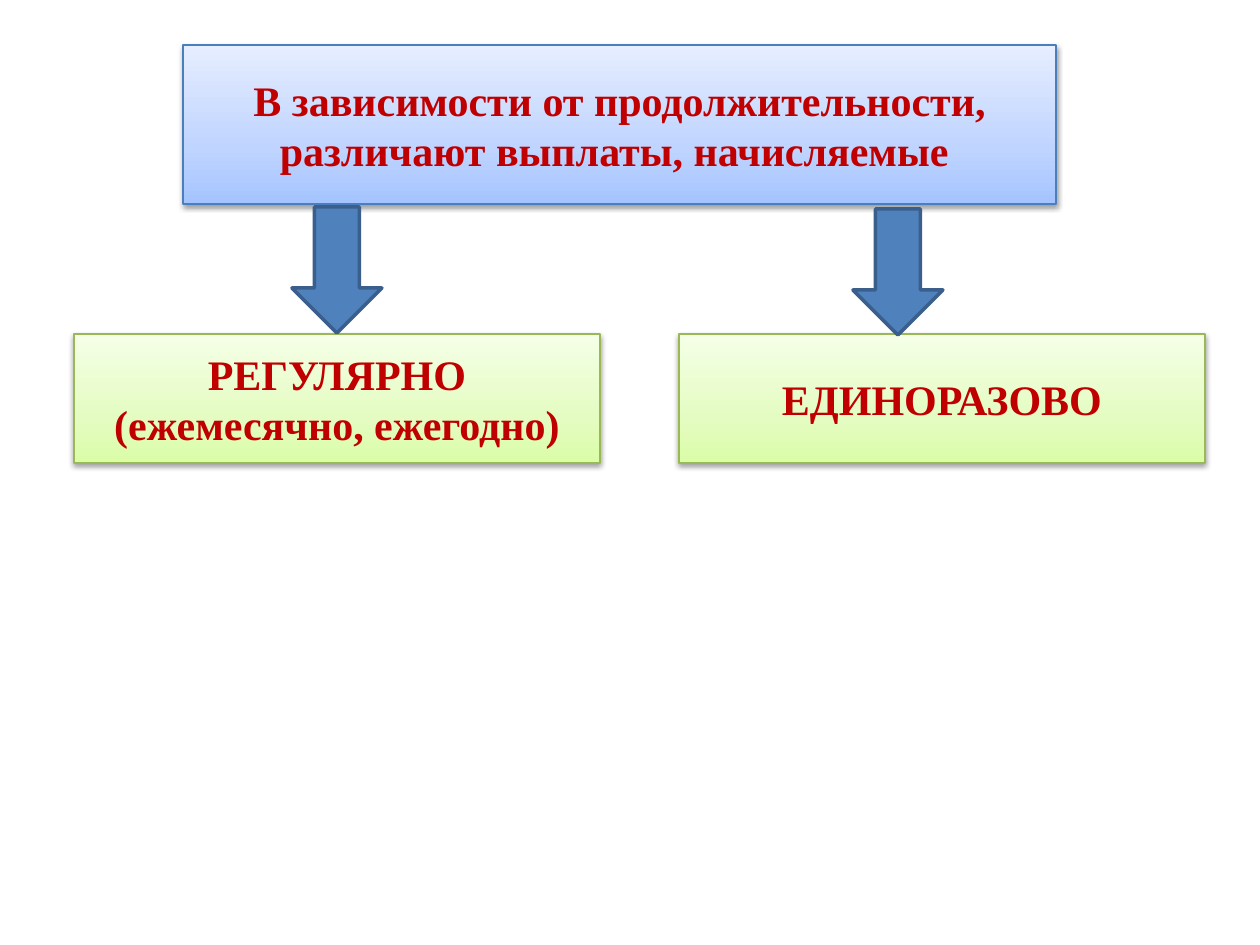
from copy import deepcopy

from lxml import etree
from pptx import Presentation, util as u
from pptx.dml.color import RGBColor
from pptx.enum import shapes, text
from pptx.oxml.ns import qn

PX = u.Inches(1) / 126
BLUE = {"stops": [(0, "A4C4FF"), (0.35, "BFD4FF"), (1, "E6EEFF")], "line": "4B7EBC"}
GREEN = {"stops": [(0, "DAFDA7"), (0.35, "E4FCC2"), (1, "F5FFE7")], "line": "98B955"}
FONT = {"name": "Times New Roman", "size": u.Pt(24), "bold": True}


def px(length):
    return u.Emu(round(length * PX))


def color(hex_value):
    return RGBColor.from_string(hex_value)


def add_shape(slide, kind, box, line_color, line_width):
    """Add an outlined preset shape without the theme's effects."""
    shape = slide.shapes.add_shape(kind, *map(px, box))
    shape.shadow.inherit = False
    shape.line.color.rgb = color(line_color)
    shape.line.width = u.Pt(line_width)
    return shape


def fill_gradient(shape, stops):
    """Fill the shape with stops running from bottom to top."""
    shape.fill.gradient()
    shape.fill.gradient_angle = 90
    stop_list = shape.fill._fill._gradFill.find(qn("a:gsLst"))
    stop_list.append(deepcopy(stop_list[0]))
    for stop, (position, hex_value) in zip(shape.fill.gradient_stops, stops):
        stop.position = position
        stop.color.rgb = color(hex_value)


def add_soft_shadow(shape):
    effects = shape._element.spPr.find(qn("a:effectLst"))
    shadow = etree.SubElement(effects, qn("a:outerShdw"), blurRad="40000",
                              dist="20000", dir="5400000", rotWithShape="0")
    black = etree.SubElement(shadow, qn("a:srgbClr"), val="000000")
    etree.SubElement(black, qn("a:alpha"), val="38000")


def add_card(slide, box, lines, style):
    """Add a shaded rectangle with one centred paragraph per line."""
    card = add_shape(slide, shapes.MSO_SHAPE.RECTANGLE, box, style["line"], 0.75)
    fill_gradient(card, style["stops"])
    add_soft_shadow(card)
    frame = card.text_frame
    frame.word_wrap = True
    frame.vertical_anchor = text.MSO_ANCHOR.MIDDLE
    frame.text = "\n".join(lines)
    for paragraph in frame.paragraphs:
        paragraph.alignment = text.PP_ALIGN.CENTER
        font = paragraph.runs[0].font
        for name, value in FONT.items():
            setattr(font, name, value)
        font.color.rgb = color("C00000")


def add_arrow(slide, box):
    arrow = add_shape(slide, shapes.MSO_SHAPE.DOWN_ARROW, box, "3A5F8C", 2)
    arrow.fill.solid()
    arrow.fill.fore_color.rgb = color("4F81BD")


def add_payment_scheme(slide, left, top):
    """Place the heading, both kinds of payment and the arrows to them."""
    add_card(slide, (left + 109, top, 873, 159),
             ["В зависимости от продолжительности, различают выплаты, начисляемые "],
             BLUE)
    kinds = [
        (0, ["РЕГУЛЯРНО", "(ежемесячно, ежегодно)"]),
        (605, ["ЕДИНОРАЗОВО"]),
    ]
    for offset, lines in kinds:
        add_card(slide, (left + offset, top + 289, 526, 129), lines, GREEN)
    for x, y in [(218, 162), (779, 164)]:
        add_arrow(slide, (left + x, top + y, 90, 126))


def main():
    presentation = Presentation()
    presentation.slide_width = px(1260)
    presentation.slide_height = px(945)
    slide = presentation.slides.add_slide(presentation.slide_layouts[6])
    add_payment_scheme(slide, 74, 45)
    presentation.save("out.pptx")


if __name__ == "__main__":
    main()
